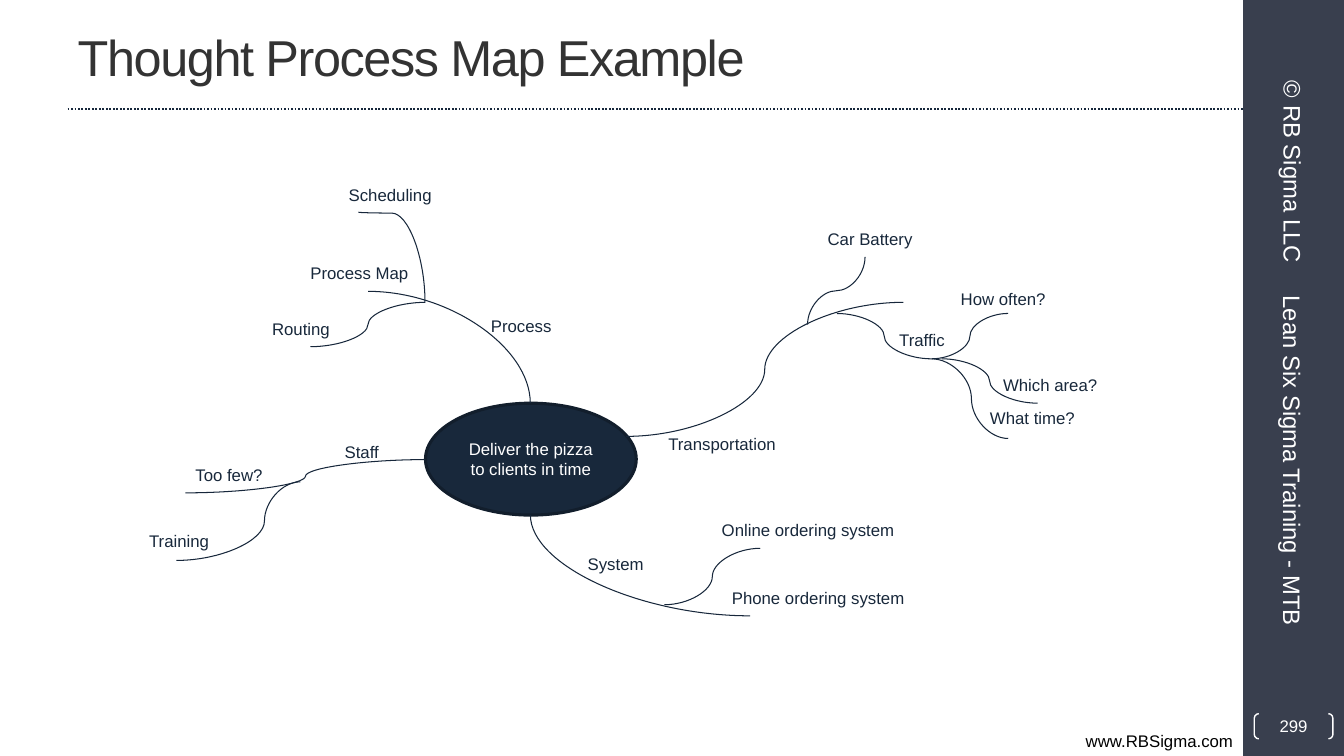
"""Build the slide with a mind map of on-time pizza delivery."""
import pptx
import pptx.util
import pptx.dml.color
import pptx.enum.dml
import pptx.enum.shapes
import pptx.enum.text
import pptx.oxml

Inches = pptx.util.Inches
RGBColor = pptx.dml.color.RGBColor
MSO_SHAPE = pptx.enum.shapes.MSO_SHAPE
MSO_CONNECTOR = pptx.enum.shapes.MSO_CONNECTOR
PP_ALIGN = pptx.enum.text.PP_ALIGN
MSO_ANCHOR = pptx.enum.text.MSO_ANCHOR
MSO_AUTO_SIZE = pptx.enum.text.MSO_AUTO_SIZE

WHITE = RGBColor(0xFF, 0xFF, 0xFF)
BLACK = RGBColor(0x00, 0x00, 0x00)
TITLE_GRAY = RGBColor(0x33, 0x33, 0x33)
SIDEBAR = RGBColor(0x39, 0x3F, 0x4E)
NAVY = RGBColor(0x18, 0x28, 0x3B)
NAVY_LINE = RGBColor(0x17, 0x27, 0x3B)
NAVY_EDGE = RGBColor(0x12, 0x1E, 0x2C)


def write(shape, text, size, color, align=PP_ALIGN.LEFT, **frame_format):
    frame = shape.text_frame
    frame.text = text
    for name, value in {"word_wrap": True, **frame_format}.items():
        setattr(frame, name, value)
    paragraph = frame.paragraphs[0]
    paragraph.alignment = align
    for name, value in {"name": "Arial", "size": pptx.util.Pt(size)}.items():
        setattr(paragraph.font, name, value)
    paragraph.font.color.rgb = color


def draw_line(kind, begin, end, width):
    connector = slide.shapes.add_connector(kind, *map(Inches, begin + end))
    connector.line.color.rgb = NAVY_LINE
    connector.line.width = pptx.util.Pt(width)
    properties = connector._element.spPr
    properties.append(pptx.oxml.parse_xml(
        '<a:effectLst xmlns:a="http://schemas.openxmlformats.org/drawingml/2006/main"/>'))
    return connector


presentation = pptx.Presentation()
presentation.slide_width = Inches(13.33)
presentation.slide_height = Inches(7.5)
slide = presentation.slides.add_slide(presentation.slide_layouts[5])

sidebar = slide.shapes.add_shape(
    MSO_SHAPE.RECTANGLE, Inches(12.33), Inches(0), Inches(1), Inches(7.5))
sidebar.shadow.inherit = False
sidebar.fill.solid()
sidebar.fill.fore_color.rgb = SIDEBAR
sidebar.line.fill.background()

rule = draw_line(MSO_CONNECTOR.STRAIGHT, (0.67, 1.08), (12.33, 1.08), 1.25)
rule.line.dash_style = pptx.enum.dml.MSO_LINE.ROUND_DOT

website = slide.shapes.add_textbox(Inches(0), Inches(7.2), Inches(12.33), Inches(0.3))
write(website, "www.RBSigma.com", 12, BLACK, PP_ALIGN.RIGHT,
      auto_size=MSO_AUTO_SIZE.SHAPE_TO_FIT_TEXT)

title = slide.shapes.title
title_place = {"left": 0.67, "top": 0.03, "width": 11.11, "height": 1.05}
for name, value in title_place.items():
    setattr(title, name, Inches(value))
write(title, "Thought Process Map Example", 36, TITLE_GRAY,
      vertical_anchor=MSO_ANCHOR.MIDDLE)
title.text_frame.paragraphs[0].runs[0]._r.get_or_add_rPr().set("spc", "-100")

goal = slide.shapes.add_shape(
    MSO_SHAPE.OVAL, Inches(4.22), Inches(4), Inches(2.09), Inches(1.11))
goal.shadow.inherit = False
goal.fill.solid()
goal.fill.fore_color.rgb = NAVY
goal.line.color.rgb = NAVY_EDGE
goal.line.width = pptx.util.Pt(2.25)
write(goal, "Deliver the pizza to clients in time", 12, WHITE, PP_ALIGN.CENTER,
      vertical_anchor=MSO_ANCHOR.MIDDLE)

S_CURVE, ARC = "curvedConnector3", "curvedConnector2"
branches = [
    ((6.21, 4.33), (8.96, 3), S_CURVE, 0, 0.5),
    ((4.22, 4.56), (1.84, 4.89), S_CURVE, 0, 0.5),
    ((6.85, 4.52), (5.85, 6.7), ARC, 270, None),
    ((3.65, 2.89), (5.26, 4), ARC, 0, None),
    ((8.63, 3.17), (7.96, 2.6), S_CURVE, 90, 0.5),
    ((8.3, 3.11), (9.24, 3.56), S_CURVE, 0, 0.5),
    ((9.24, 3.56), (10, 4.35), S_CURVE, 0, 0.52),
    ((9.24, 3.56), (10, 3.11), S_CURVE, 0, 0.5),
    ((9.34, 3.56), (10.29, 4), S_CURVE, 0, 0.5),
    ((2.98, 4.78), (1.75, 5.56), S_CURVE, 0, 0.29),
    ((3.44, 2.88), (4.33, 2.22), S_CURVE, 270, 0.99),
    ((3.08, 3.44), (4.22, 3), S_CURVE, 0, 0.5),
    ((6.59, 6), (7.54, 5.44), S_CURVE, 0, 0.5),
]
for begin, end, preset, rotation, bend in branches:
    branch = draw_line(MSO_CONNECTOR.CURVE, begin, end, 0.75)
    properties = branch._element.spPr
    properties.prstGeom.set("prst", preset)
    if rotation:
        properties.xfrm.set("rot", str(rotation * 60000))
    if bend:
        guide = pptx.oxml.parse_xml(
            '<a:gd xmlns:a="http://schemas.openxmlformats.org/drawingml/2006/main" '
            f'name="adj1" fmla="val {round(bend * 100000)}"/>')
        properties.prstGeom.get_or_add_avLst().append(guide)

labels = [
    ("Transportation", 6.53, 4.25, 1.36),
    ("Staff", 3.32, 4.33, 0.58),
    ("System", 5.73, 5.44, 0.81),
    ("Process", 4.77, 3.08, 0.86),
    ("Car Battery", 8.11, 2.22, 1.12),
    ("Traffic", 8.82, 3.22, 0.7),
    ("How often?", 9.43, 2.82, 1.12),
    ("Which area?", 9.85, 3.67, 1.22),
    ("What time?", 9.72, 4, 1.12),
    ("Training", 1.38, 5.22, 0.85),
    ("Too few?", 1.84, 4.56, 0.93),
    ("Scheduling", 3.36, 1.78, 1.1),
    ("Routing", 2.6, 3.11, 0.83),
    ("Process Map", 2.98, 2.56, 1.26),
    ("Online ordering system", 7.06, 5.11, 2.05),
    ("Phone ordering system", 7.16, 5.78, 2.05),
]
for text, left, top, width in labels:
    label = slide.shapes.add_textbox(Inches(left), Inches(top), Inches(width), Inches(0.33))
    write(label, text, 12, NAVY, word_wrap=False,
          auto_size=MSO_AUTO_SIZE.SHAPE_TO_FIT_TEXT)

sidebar_texts = [
    ("Lean Six Sigma Training - MTB", 10.86, 4.53, 3.92, PP_ALIGN.LEFT),
    ("© RB Sigma LLC", 11.7, 1.44, 2.25, PP_ALIGN.CENTER),
]
for text, left, top, width, align in sidebar_texts:
    sidebar_text = slide.shapes.add_textbox(
        Inches(left), Inches(top), Inches(width), Inches(0.53))
    sidebar_text.rotation = 90
    write(sidebar_text, text, 17, WHITE, align, vertical_anchor=MSO_ANCHOR.MIDDLE)

page_number = slide.shapes.add_shape(
    MSO_SHAPE.DOUBLE_BRACKET, Inches(12.44), Inches(7.08), Inches(0.78), Inches(0.25))
page_number.shadow.inherit = False
page_number.adjustments[0] = 0.18
page_number.fill.background()
page_number.line.color.rgb = WHITE
page_number.line.width = pptx.util.Pt(1)
write(page_number, "299", 12, WHITE, PP_ALIGN.CENTER, vertical_anchor=MSO_ANCHOR.MIDDLE,
      margin_left=0, margin_top=0, margin_right=0, margin_bottom=0)

presentation.save("out.pptx")
